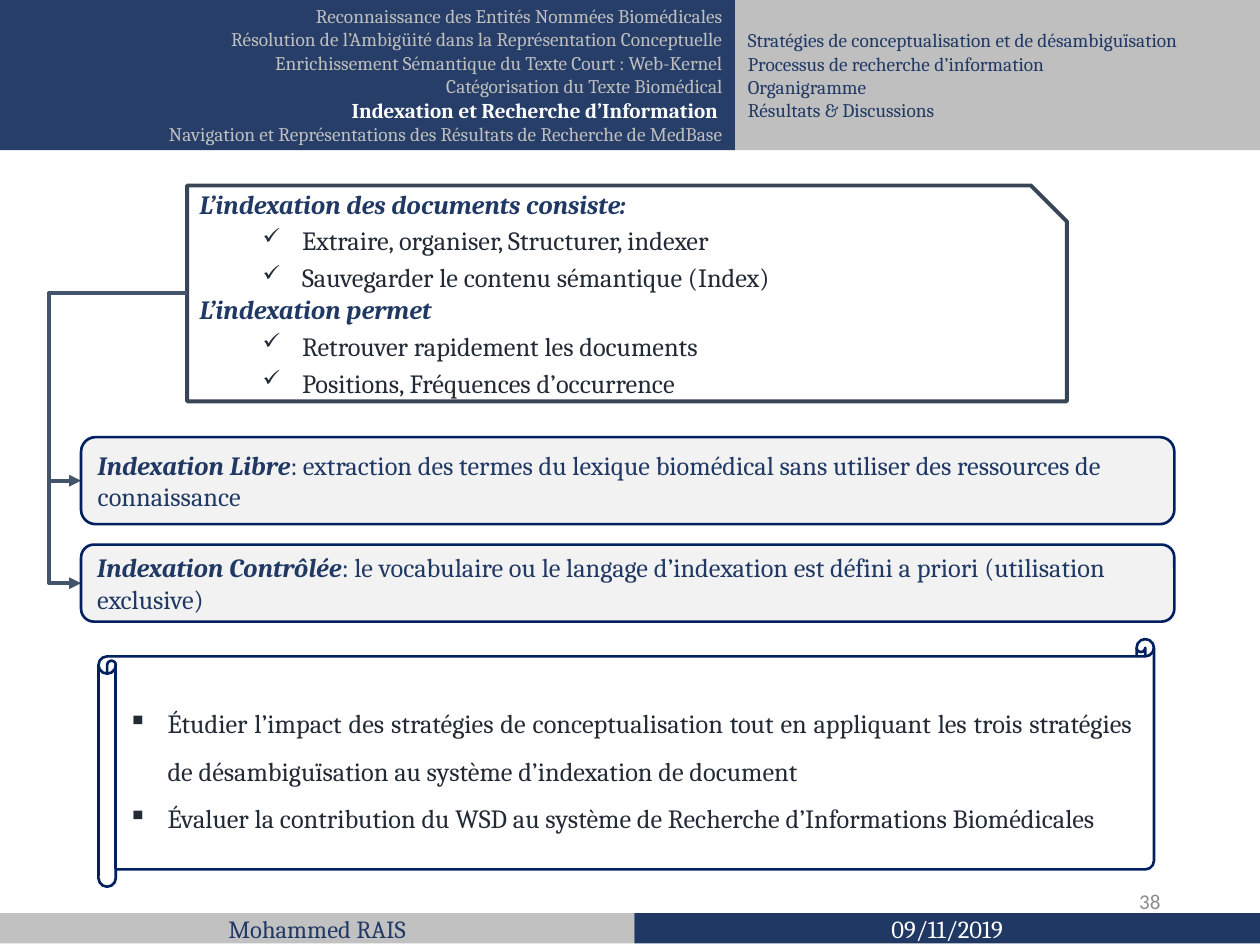
from lxml import etree
from pptx import Presentation
from pptx.dml.color import RGBColor
from pptx.enum.shapes import MSO_CONNECTOR as CONN, MSO_SHAPE as SHAPE
from pptx.enum.text import MSO_ANCHOR as ANCHOR, PP_ALIGN as ALIGN
from pptx.oxml.ns import qn
from pptx.util import Cm, Pt

NAVY = RGBColor(0x20, 0x38, 0x64)
OUTLINE = RGBColor(0x00, 0x20, 0x60)
SLATE = RGBColor(0x37, 0x45, 0x57)
ARROW = RGBColor(0x44, 0x54, 0x6A)
INK = RGBColor(0x22, 0x2A, 0x35)
SILVER = RGBColor(0xBF, 0xBF, 0xBF)
PALE = RGBColor(0xF2, 0xF2, 0xF2)
GREY = RGBColor(0x8C, 0x8C, 0x8C)
WHITE = RGBColor(0xFF, 0xFF, 0xFF)

# Content
CHAPTERS = [
    "Reconnaissance des Entités Nommées Biomédicales",
    "Résolution de l’Ambigüité dans la Représentation Conceptuelle",
    "Enrichissement Sémantique du Texte Court : Web-Kernel",
    "Catégorisation du Texte Biomédical",
    "Indexation et Recherche d’Information ",
    "Navigation et Représentations des Résultats de Recherche de MedBase",
]
CURRENT = 4
SECTIONS = [
    "Stratégies de conceptualisation et de désambiguïsation",
    "Processus de recherche d’information",
    "Organigramme",
    "Résultats & Discussions",
]
INDEXING = [
    ("L’indexation des documents consiste:",
     ["Extraire, organiser, Structurer, indexer",
      "Sauvegarder le contenu sémantique (Index)"]),
    ("L’indexation permet",
     ["Retrouver rapidement les documents",
      "Positions, Fréquences d’occurrence"]),
]
# Term, definition, top and height in cm
KINDS = [
    ("Indexation Libre", ": extraction des termes du lexique biomédical sans "
     "utiliser des ressources de connaissance", 8.79, 1.75),
    ("Indexation Contrôlée", ": le vocabulaire ou le langage d’indexation est "
     "défini a priori (utilisation exclusive)", 10.95, 1.55),
]
GOALS = [
    "Étudier l’impact des stratégies de conceptualisation tout en appliquant les "
    "trois stratégies de désambiguïsation au système d’indexation de document",
    "Évaluer la contribution du WSD au système de Recherche d’Informations "
    "Biomédicales",
]
AUTHOR, DATE, PAGE = "Mohammed RAIS", "09/11/2019", "38"

# Layout in cm
WIDTH, HEIGHT = 25.32, 19.0
HEADER_H, HEADER_SPLIT = 3.02, 14.78
FOOTER_TOP, FOOTER_H, FOOTER_SPLIT = 18.36, 0.61, 12.75
INTRO = (3.76, 3.73, 17.68, 4.34)
KIND_LEFT, KIND_W = 1.63, 21.97
TRUNK = 0.99
SCROLL = (1.98, 12.85, 21.21, 4.98)

prs = Presentation()
prs.slide_width, prs.slide_height = Cm(WIDTH), Cm(HEIGHT)
slide = prs.slides.add_slide(prs.slide_layouts[6])


def add_box(kind, box, fill=None, line=None, weight=1.5, alpha=None):
    sp = slide.shapes.add_shape(kind, *map(Cm, box))
    sp.shadow.inherit = False
    if fill is None:
        sp.fill.background()
    else:
        sp.fill.solid()
        sp.fill.fore_color.rgb = fill
    if alpha:
        clr = sp.fill._xPr.find(".//" + qn("a:srgbClr"))
        etree.SubElement(clr, qn("a:alpha"), val=str(alpha * 1000))
    if line is None:
        sp.line.fill.background()
    else:
        sp.line.color.rgb = line
        sp.line.width = Pt(weight)
    sp.text_frame.word_wrap = True
    sp.text_frame.vertical_anchor = ANCHOR.MIDDLE
    return sp


def add_line(tf, text, size, color, align=ALIGN.LEFT, strong=False):
    """Fill the first paragraph, or add one once it is taken."""
    p = tf.add_paragraph() if tf.text else tf.paragraphs[0]
    p.alignment = align
    add_run(p, text, size, color, strong)
    return p


def add_run(p, text, size, color, bold=False, italic=False, font="Cambria"):
    r = p.add_run()
    r.text = text
    r.font.name, r.font.size = font, Pt(size)
    r.font.color.rgb = color
    r.font.bold, r.font.italic = bold, italic
    return r


def add_bullet(p, char, left, percent=100):
    pPr = p._p.get_or_add_pPr()
    pPr.set("marL", str(Cm(left)))
    pPr.set("indent", str(-Cm(0.79)))
    etree.SubElement(pPr, qn("a:buSzPct"), val=str(percent * 1000))
    etree.SubElement(pPr, qn("a:buChar"), char=char)


def add_elbow(x1, y1, x2, y2, trunk):
    cx = slide.shapes.add_connector(CONN.ELBOW, *map(Cm, (x1, y1, x2, y2)))
    cx.line.color.rgb = ARROW
    cx.line.width = Pt(2.25)
    etree.SubElement(cx.line._get_or_add_ln(), qn("a:tailEnd"), type="triangle")
    spPr = cx._element.spPr
    etree.SubElement(spPr, qn("a:effectLst"))
    guides = spPr.find(qn("a:prstGeom")).get_or_add_avLst()
    bend = round((trunk - x1) / (x2 - x1) * 100000)
    etree.SubElement(guides, qn("a:gd"), name="adj1", fmla=f"val {bend}")


# Header: chapters and sections
tf = add_box(SHAPE.RECTANGLE, (0, 0, HEADER_SPLIT, HEADER_H), NAVY, alpha=97).text_frame
for i, chapter in enumerate(CHAPTERS):
    now = i == CURRENT
    add_line(tf, chapter, 12 if now else 11, WHITE if now else SILVER, ALIGN.RIGHT, now)
tf = add_box(SHAPE.RECTANGLE, (HEADER_SPLIT, 0, WIDTH - HEADER_SPLIT, HEADER_H),
             SILVER).text_frame
for section in SECTIONS:
    add_line(tf, section, 11, NAVY)

# What indexing does
tf = add_box(SHAPE.SNIP_1_RECTANGLE, INTRO, WHITE, SLATE, 2.25).text_frame
tf.margin_bottom = Cm(0.5)
for heading, items in INDEXING:
    p = add_line(tf, heading, 15, NAVY, strong=True)
    p.runs[0].font.italic = True
    for item in items:
        p = add_line(tf, item, 15, INK)
        p.space_before = Pt(3)
        add_bullet(p, "✓", 2.06, 85)

# Two kinds of indexing, each linked to the box above
for term, definition, top, height in KINDS:
    add_elbow(INTRO[0], INTRO[1] + INTRO[3] / 2, KIND_LEFT, top + height / 2, TRUNK)
    sp = add_box(SHAPE.ROUNDED_RECTANGLE, (KIND_LEFT, top, KIND_W, height), PALE, OUTLINE)
    p = sp.text_frame.paragraphs[0]
    p.alignment = ALIGN.LEFT
    add_run(p, term, 15, NAVY, bold=True, italic=True)
    add_run(p, definition, 15, NAVY)

# Goals
sp = add_box(SHAPE.HORIZONTAL_SCROLL, SCROLL, line=OUTLINE)
sp.adjustments[0] = 0.07
for goal in GOALS:
    p = add_line(sp.text_frame, goal, 15, INK, ALIGN.JUSTIFY)
    p.line_spacing = 1.5
    add_bullet(p, "▪", 0.79)

# Footer and page number
for text, left, right, fill, color, alpha in [
    (AUTHOR, 0, FOOTER_SPLIT, SILVER, NAVY, 97),
    (DATE, FOOTER_SPLIT, WIDTH, NAVY, WHITE, None),
]:
    sp = add_box(SHAPE.RECTANGLE, (left, FOOTER_TOP, right - left, FOOTER_H), fill, alpha=alpha)
    add_line(sp.text_frame, text, 14, color, ALIGN.CENTER)
tf = slide.shapes.add_textbox(Cm(17.88), Cm(17.6), Cm(5.69), Cm(1.02)).text_frame
tf.word_wrap = True
tf.vertical_anchor = ANCHOR.MIDDLE
tf.paragraphs[0].alignment = ALIGN.RIGHT
add_run(tf.paragraphs[0], PAGE, 12, GREY, font="Calibri")

prs.save("out.pptx")
